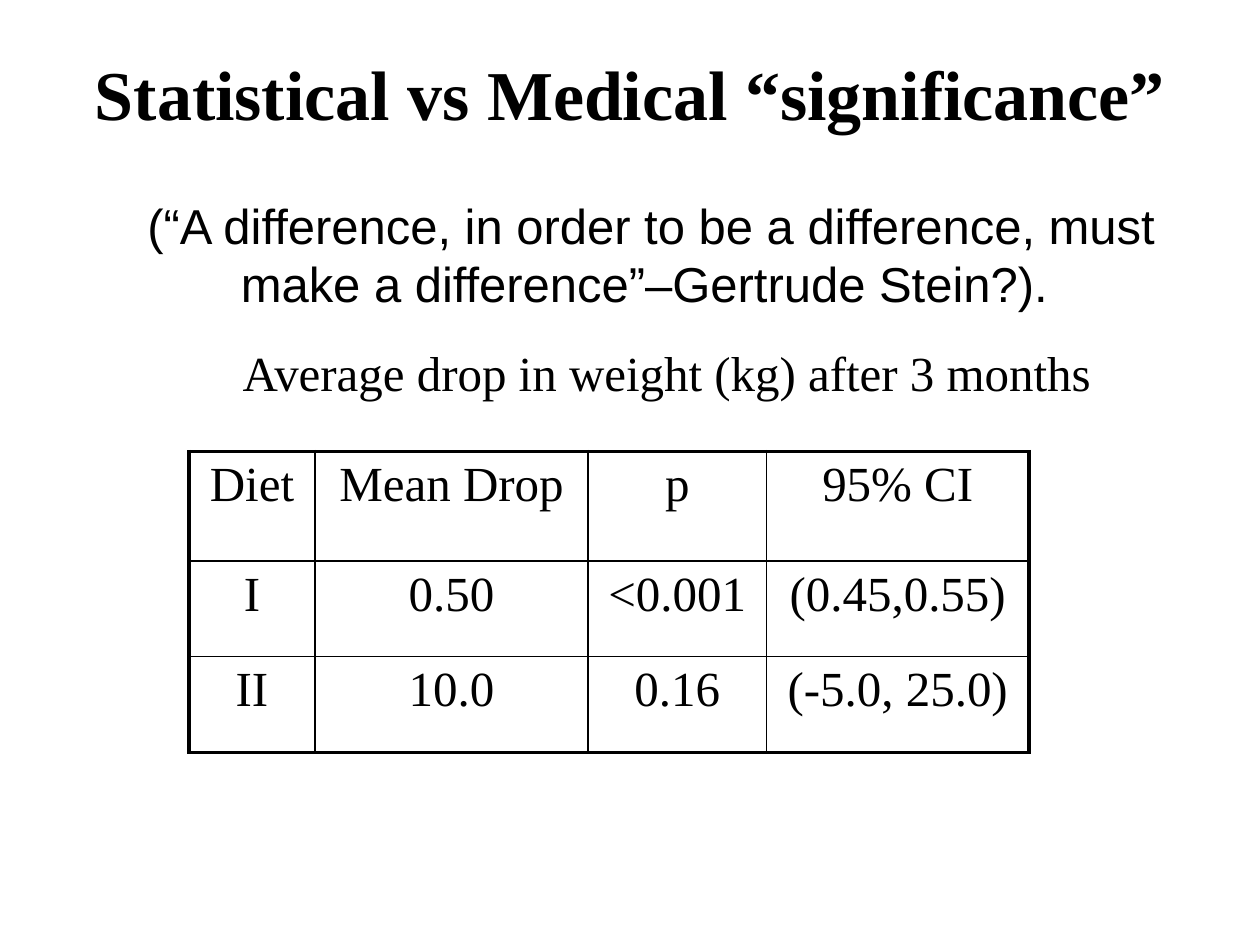
import pptx
import pptx.dml.color
import pptx.enum.text
import pptx.oxml
import pptx.oxml.ns
import pptx.util
from pptx.util import Pt

BLACK = "000000"
SERIF = "Times New Roman"
OUTER, INNER = 2.25, 1

COLUMN_WIDTHS = [72, 156, 102, 150]
ROW_HEIGHTS = [62.6, 54.7, 54.7]
DIET_RESULTS = [
    ["Diet", "Mean Drop", "p", "95% CI"],
    ["I", "0.50", "<0.001", "(0.45,0.55)"],
    ["II", "10.0", "0.16", "(-5.0, 25.0)"],
]


def color(hex_string):
    return pptx.dml.color.RGBColor.from_string(hex_string)


def write(frame, text, size=28, font=SERIF, bold=False):
    """Put one centred paragraph in a text frame."""
    frame.text = text
    paragraph = frame.paragraphs[0]
    paragraph.alignment = pptx.enum.text.PP_ALIGN.CENTER
    paragraph.font.size = Pt(size)
    paragraph.font.name = font
    paragraph.font.bold = bold
    paragraph.font.color.rgb = color(BLACK)
    return paragraph


def add_title(slide, text):
    title = slide.shapes.title
    title.left, title.top, title.width, title.height = Pt(36), Pt(21.6), Pt(648), Pt(62.6)
    title.text_frame.vertical_anchor = pptx.enum.text.MSO_ANCHOR.MIDDLE
    write(title.text_frame, text, size=40, bold=True)


def add_text(slide, text, left, top, width, height, font=SERIF):
    box = slide.shapes.add_textbox(Pt(left), Pt(top), Pt(width), Pt(height))
    box.text_frame.word_wrap = True
    return write(box.text_frame, text, font=font)


def add_border(cell, side, width):
    line = pptx.oxml.parse_xml(
        f'<a:ln{side} {pptx.oxml.ns.nsdecls("a")} w="{Pt(width)}">'
        f'<a:solidFill><a:srgbClr val="{BLACK}"/></a:solidFill></a:ln{side}>'
    )
    cell._tc.get_or_add_tcPr().append(line)


def add_results_table(slide, rows, left, top):
    row_count, column_count = len(rows), len(rows[0])
    table = slide.shapes.add_table(
        row_count, column_count, Pt(left), Pt(top),
        Pt(sum(COLUMN_WIDTHS)), Pt(sum(ROW_HEIGHTS)),
    ).table
    table.first_row = table.horz_banding = False
    for column, width in zip(table.columns, COLUMN_WIDTHS):
        column.width = Pt(width)
    for row, height in zip(table.rows, ROW_HEIGHTS):
        row.height = Pt(height)

    for r, values in enumerate(rows):
        for c, value in enumerate(values):
            cell = table.cell(r, c)
            write(cell.text_frame, value)
            # Thick frame around the table, thin rules inside
            on_edge = {
                "L": c == 0,
                "R": c == column_count - 1,
                "T": r == 0,
                "B": r == row_count - 1,
            }
            for side, is_outer in on_edge.items():
                add_border(cell, side, OUTER if is_outer else INNER)
            cell.fill.background()


def main():
    deck = pptx.Presentation()
    deck.slide_width, deck.slide_height = Pt(720), Pt(540)
    slide = deck.slides.add_slide(deck.slide_layouts.get_by_name("Title Only"))

    add_title(slide, "Statistical vs Medical “significance”")

    # Table caption and table
    caption = add_text(slide, "Average drop in weight (kg) after 3 months", 96, 192, 570, 54)
    caption.space_before = Pt(5.6)
    add_results_table(slide, DIET_RESULTS, 108, 258)

    # Quotation
    add_text(
        slide,
        "(“A difference, in order to be a difference, must "
        "make a difference”–Gertrude Stein?). ",
        72, 108, 600, 75, font="Arial",
    )

    deck.save("out.pptx")


if __name__ == "__main__":
    main()
